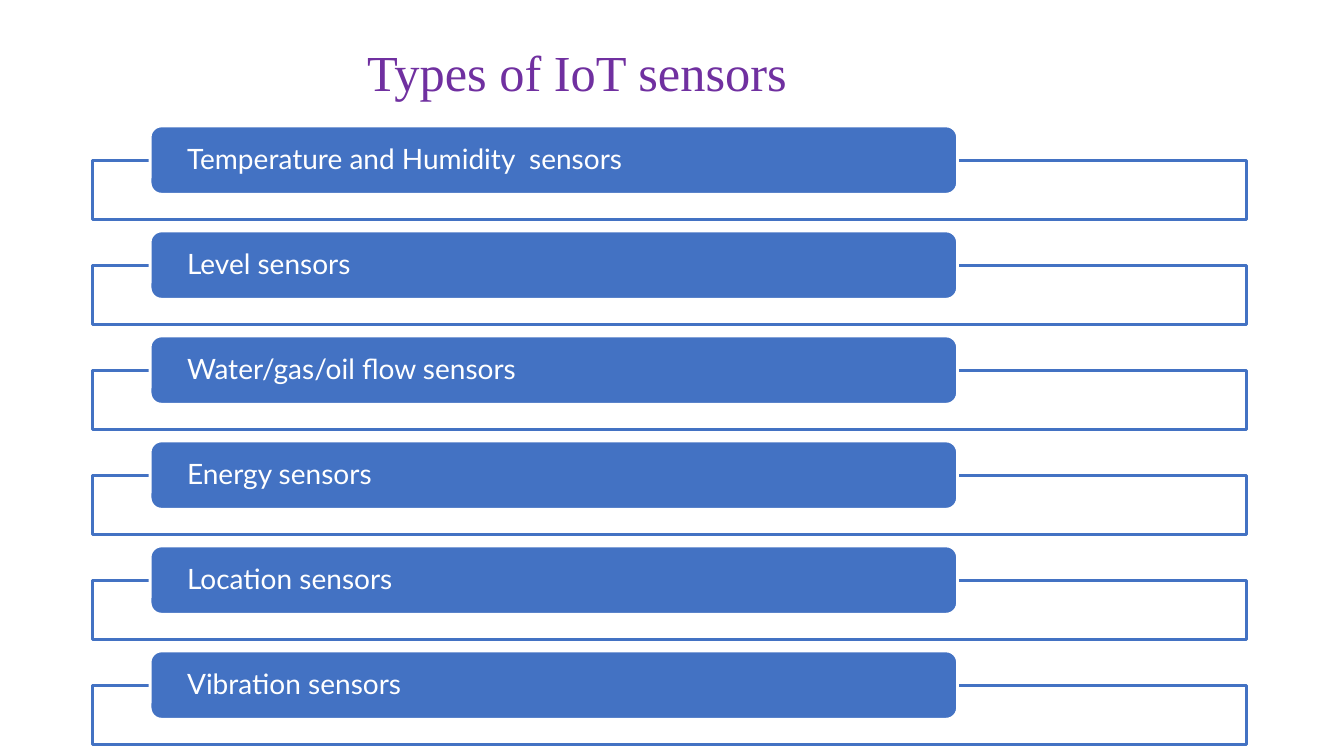
"""Build the slide that lists the types of IoT sensors."""
import pptx
import pptx.dml.color
import pptx.enum.shapes
import pptx.enum.text
import pptx.oxml.ns
import pptx.util
from lxml import etree

PX = 9525
BLUE = "4372C3"
WHITE = "FFFFFF"
PURPLE = "7030A0"
PITCH = 100
KINDS = (
    "Temperature and Humidity  sensors",
    "Level sensors",
    "Water/gas/oil flow sensors",
    "Energy sensors",
    "Location sensors",
    "Vibration sensors",
)
SHAPES = pptx.enum.shapes.MSO_SHAPE
ALIGN = pptx.enum.text.PP_ALIGN


def px(count):
    return pptx.util.Emu(count * PX)


def paint(target, color):
    target.rgb = pptx.dml.color.RGBColor.from_string(color)


def write(shape, text, face, size, color, align, side):
    frame = shape.text_frame
    frame.word_wrap = True
    frame.auto_size = pptx.enum.text.MSO_AUTO_SIZE.NONE
    frame.vertical_anchor = pptx.enum.text.MSO_ANCHOR.MIDDLE
    frame.margin_left = frame.margin_right = px(side)
    frame.margin_top = frame.margin_bottom = px(4)
    frame.text = text
    line = frame.paragraphs[0]
    line.alignment = align
    line.line_spacing = 0.9
    line.font.name = face
    line.font.size = pptx.util.Pt(size)
    paint(line.font.color, color)


def block(slide, kind, left, top, width, height, fill, edge):
    shape = slide.shapes.add_shape(kind, px(left), px(top), px(width), px(height))
    shape.shadow.inherit = False
    shape.fill.solid()
    paint(shape.fill.fore_color, fill)
    paint(shape.line.color, edge)
    shape.line.width = pptx.util.Pt(2)
    return shape


def fade(shape, share):
    qn = pptx.oxml.ns.qn
    color = shape.fill._xPr.find(qn("a:solidFill")).find(qn("a:srgbClr"))
    etree.SubElement(color, qn("a:alpha")).set("val", str(share * 1000))


def sensor(slide, text, top):
    frame = block(slide, SHAPES.RECTANGLE, 88, top + 33, 1099, 56, WHITE, BLUE)
    fade(frame, 89)
    label = block(slide, SHAPES.ROUNDED_RECTANGLE, 143, top, 769, 65, BLUE, WHITE)
    write(label, text, "Lato", 20, WHITE, ALIGN.LEFT, 32)


def head(slide, text):
    title = slide.shapes.title
    title.left, title.top = px(-93), px(37)
    title.width, title.height = px(1285), px(69)
    write(title, text, "Times New Roman", 36, PURPLE, ALIGN.CENTER, 10)


def main():
    deck = pptx.Presentation()
    deck.slide_width, deck.slide_height = px(1280), px(720)
    slide = deck.slides.add_slide(deck.slide_layouts.get_by_name("Title Only"))
    head(slide, "Types of IoT sensors")
    for row, kind in enumerate(KINDS):
        sensor(slide, kind, 120 + row * PITCH)
    deck.save("out.pptx")


if __name__ == "__main__":
    main()
